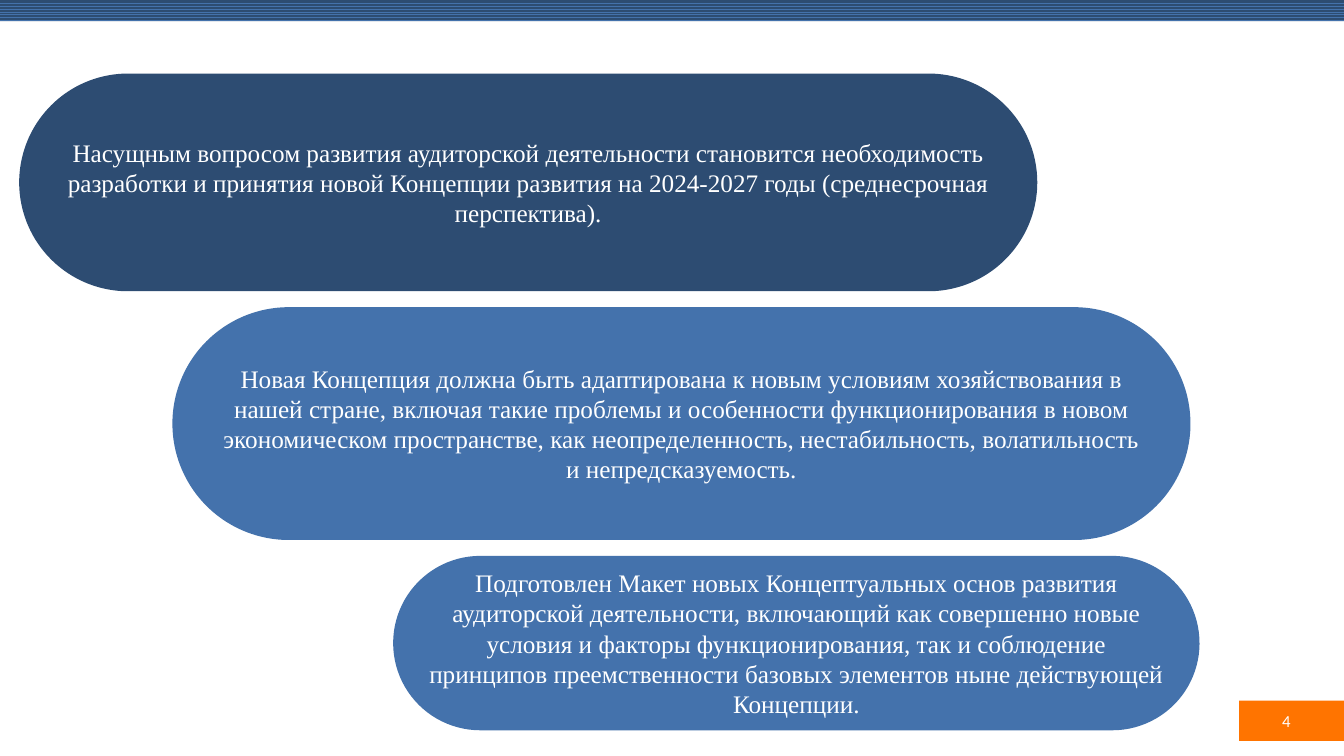
import pptx
import pptx.dml.color
import pptx.enum.dml
import pptx.enum.shapes
import pptx.enum.text
import pptx.util

RGBColor = pptx.dml.color.RGBColor
Shape = pptx.enum.shapes.MSO_SHAPE
Align = pptx.enum.text.PP_ALIGN

NAVY = RGBColor(0x2D, 0x4C, 0x72)
BLUE = RGBColor(0x44, 0x72, 0xAC)
ORANGE = RGBColor(0xFF, 0x74, 0x00)
WHITE = RGBColor(0xFF, 0xFF, 0xFF)

SLIDE_WIDTH = pptx.util.Inches(13.33)
SLIDE_HEIGHT = pptx.util.Inches(7.5)

FIRST_TOP = 9.73
PILL_GAP = 2.1
PILLS = [
    (1.43, 75.75, 28.8, NAVY,
     "Насущным вопросом развития аудиторской деятельности становится необходимость "
     "разработки и принятия новой Концепции развития на 2024-2027 годы "
     "(среднесрочная перспектива)."),
    (12.83, 75.75, 30.8, BLUE,
     "Новая Концепция должна быть адаптирована к новым условиям хозяйствования в нашей "
     "стране, включая такие проблемы и особенности функционирования в новом экономическом "
     "пространстве, как неопределенность, нестабильность, волатильность и "
     "непредсказуемость."),
    (29.25, 60, 23.07, BLUE,
     "Подготовлен Макет новых Концептуальных основ развития аудиторской деятельности, "
     "включающий как совершенно новые условия и факторы функционирования, так и соблюдение "
     "принципов преемственности базовых элементов ныне действующей Концепции."),
]


def area(left, top, width, height):
    return (int(SLIDE_WIDTH * left / 100), int(SLIDE_HEIGHT * top / 100),
            int(SLIDE_WIDTH * width / 100), int(SLIDE_HEIGHT * height / 100))


def write(shape, text, font="Times New Roman", size=18, color=WHITE, align=Align.CENTER):
    frame = shape.text_frame
    frame.word_wrap = True
    frame.vertical_anchor = pptx.enum.text.MSO_ANCHOR.MIDDLE
    para = frame.paragraphs[0]
    para.alignment = align
    span = para.add_run()
    span.text = text
    span.font.name = font
    span.font.size = pptx.util.Pt(size)
    span.font.color.rgb = color


def add_block(page, place, color, kind=Shape.RECTANGLE):
    block = page.shapes.add_shape(kind, *area(*place))
    block.shadow.inherit = False
    block.line.fill.background()
    block.fill.solid()
    block.fill.fore_color.rgb = color
    return block


def add_header_band(page):
    band = add_block(page, (0, 0, 100, 2.8), NAVY)
    band.fill.patterned()
    band.fill.pattern = pptx.enum.dml.MSO_PATTERN.ZIG_ZAG
    band.fill.fore_color.rgb = BLUE
    band.fill.back_color.rgb = NAVY


def add_page_number(page, number):
    add_block(page, (92.2, 92.67, 7.8, 5.33), ORANGE)
    box = page.shapes.add_textbox(*area(74.27, 92.67, 22.5, 5.33))
    write(box, number, font="Calibri", size=12, align=Align.RIGHT)


def add_pills(page):
    top = FIRST_TOP
    for left, width, height, color, text in PILLS:
        pill = add_block(page, (left, top, width, height), color, Shape.ROUNDED_RECTANGLE)
        pill.adjustments[0] = 0.5
        write(pill, text)
        top += height + PILL_GAP


def main():
    deck = pptx.Presentation()
    deck.slide_width = SLIDE_WIDTH
    deck.slide_height = SLIDE_HEIGHT
    page = deck.slides.add_slide(deck.slide_layouts[6])
    page.background.fill.solid()
    page.background.fill.fore_color.rgb = WHITE
    add_header_band(page)
    add_page_number(page, "4")
    add_pills(page)
    deck.save("out.pptx")


if __name__ == "__main__":
    main()
